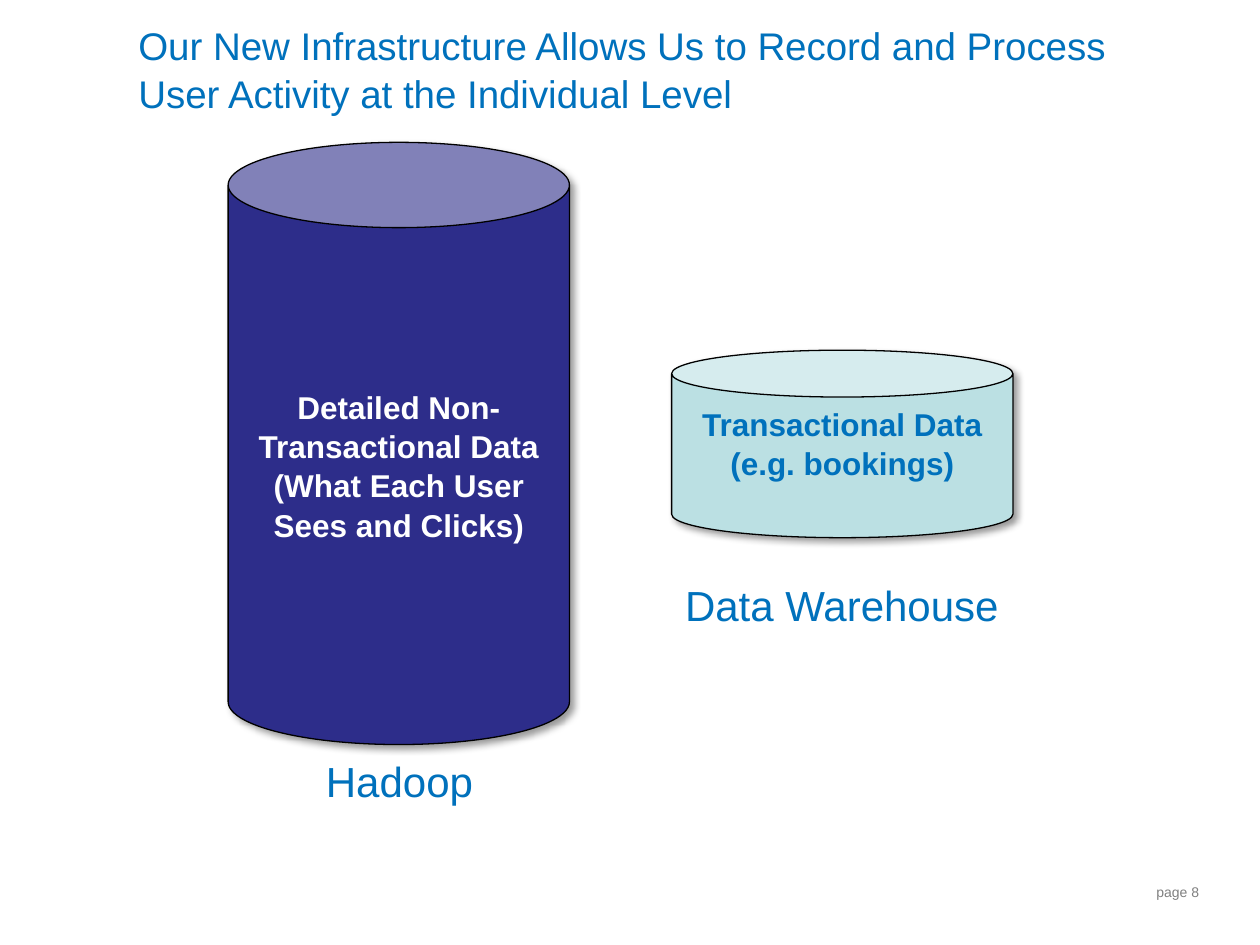
"""Build a slide comparing Hadoop and data warehouse storage."""
from lxml.etree import SubElement
from pptx import Presentation
from pptx.dml.color import RGBColor
from pptx.enum.shapes import MSO_SHAPE as Shape
from pptx.enum.text import MSO_ANCHOR as Anchor, MSO_AUTO_SIZE as AutoSize, PP_ALIGN as Align
from pptx.oxml.ns import qn
from pptx.util import Cm, Pt

BLUE = RGBColor(0x00, 0x71, 0xBC)
GRAY = RGBColor(0x80, 0x80, 0x80)
NAVY = RGBColor(0x2D, 0x2D, 0x8A)
TEAL = RGBColor(0xBB, 0xE0, 0xE3)
BLACK = RGBColor(0x00, 0x00, 0x00)
WHITE = RGBColor(0xFF, 0xFF, 0xFF)


def write(box, text, size, color, bold=False):
    box.text_frame.text = text
    para = box.text_frame.paragraphs[0]
    para.line_spacing = 1.04
    for span in para.runs:
        span.font.name = "Arial"
        span.font.size = Pt(size)
        span.font.bold = bold
        span.font.color.rgb = color
    return para


def add_shadow(shape):
    shape.shadow.inherit = False
    effects = shape._element.spPr.find(qn("a:effectLst"))
    shadow = SubElement(effects, qn("a:outerShdw"), blurRad=str(Pt(4)), dist=str(Pt(3)),
                        dir="2700000", algn="tl", rotWithShape="0")
    color = SubElement(shadow, qn("a:srgbClr"), val=str(BLACK))
    SubElement(color, qn("a:alpha"), val="40000")


deck = Presentation()
deck.slide_width, deck.slide_height = Cm(25.4), Cm(19.05)
page = deck.slides.add_slide(deck.slide_layouts[6])

title = page.shapes.add_textbox(Cm(2.54), Cm(0.3), Cm(20.96), Cm(2.16))
title.text_frame.word_wrap = True
title.text_frame.vertical_anchor = Anchor.MIDDLE
write(title, "Our New Infrastructure Allows Us to Record and Process "
      "User Activity at the Individual Level", 22, BLUE)

page_number = page.shapes.add_textbox(Cm(23.06), Cm(17.68), Cm(1.98), Cm(0.71))
page_number.text_frame.word_wrap = True
write(page_number, "page 8", 8, GRAY)

stores = [
    ("Transactional Data (e.g. bookings)", 13.54, 7.06, 3.78, TEAL, BLUE, Anchor.TOP),
    ("Detailed Non-Transactional Data (What Each User Sees and Clicks)",
     4.6, 2.87, 12.14, NAVY, WHITE, Anchor.MIDDLE),
]
for text, left, top, height, fill, color, anchor in stores:
    store = page.shapes.add_shape(Shape.CAN, Cm(left), Cm(top), Cm(6.88), Cm(height))
    store.adjustments[0] = 0.25
    store.fill.solid()
    store.fill.fore_color.rgb = fill
    store.line.color.rgb = BLACK
    store.line.width = Pt(0.75)
    add_shadow(store)
    store.text_frame.word_wrap = True
    store.text_frame.vertical_anchor = anchor
    write(store, text, 18, color, bold=True).alignment = Align.CENTER

labels = [
    ("Data Warehouse", 13.56, 11.51, 6.91),
    ("Hadoop", 6.32, 15.06, 3.51),
]
for text, left, top, width in labels:
    label = page.shapes.add_textbox(Cm(left), Cm(top), Cm(width), Cm(1.28))
    label.text_frame.word_wrap = False
    label.text_frame.auto_size = AutoSize.SHAPE_TO_FIT_TEXT
    write(label, text, 24, BLUE)

deck.save("out.pptx")
